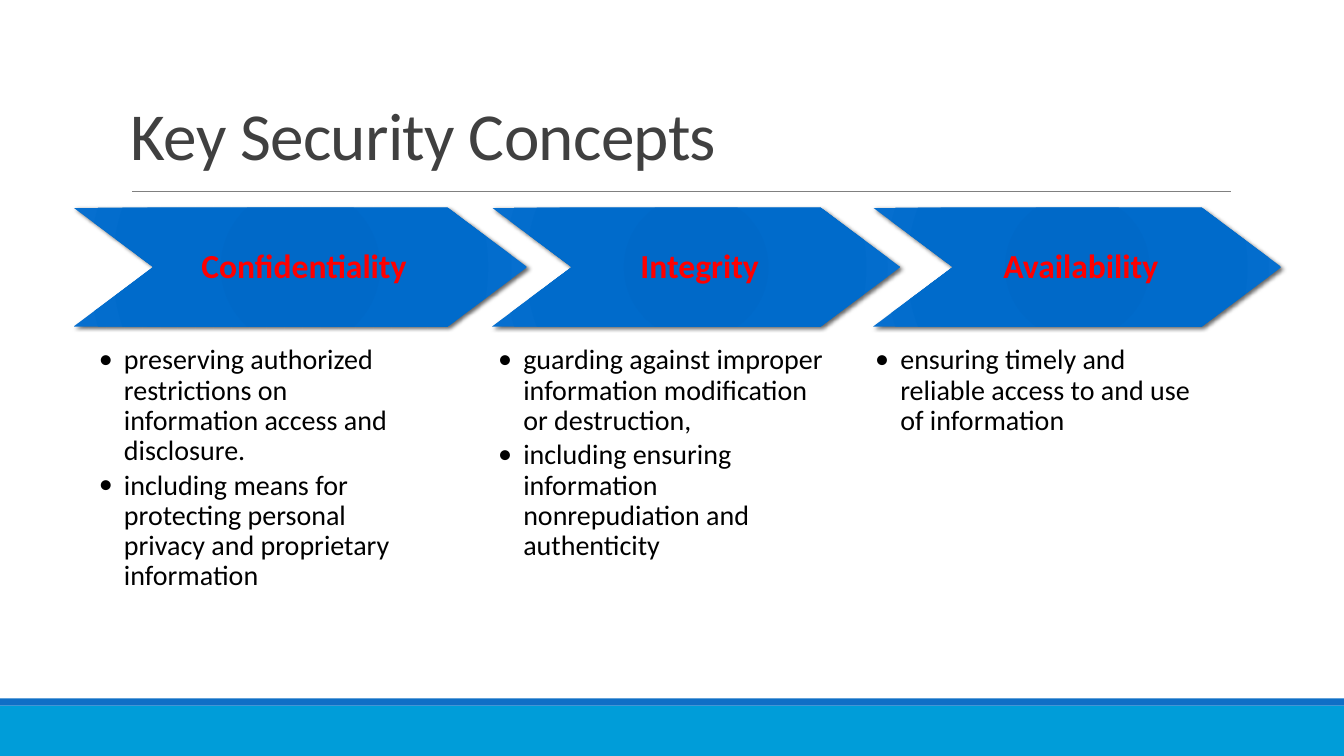
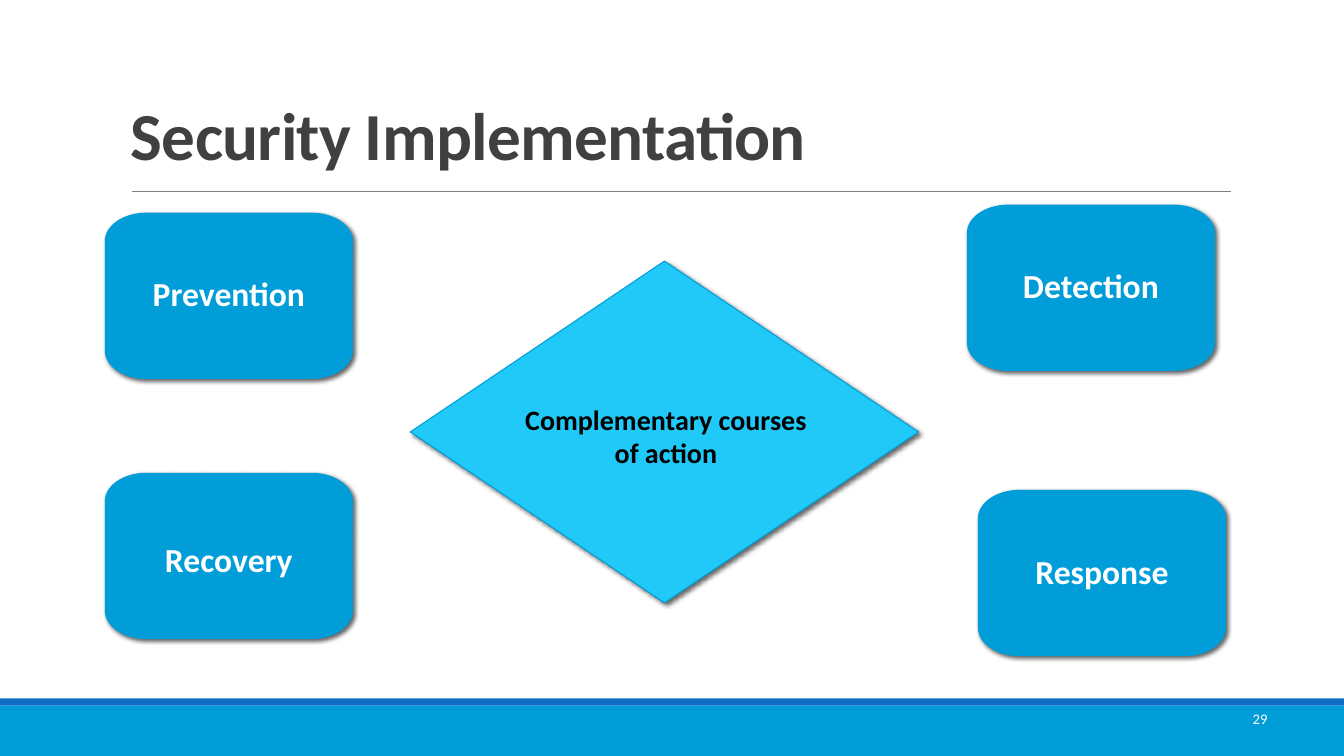
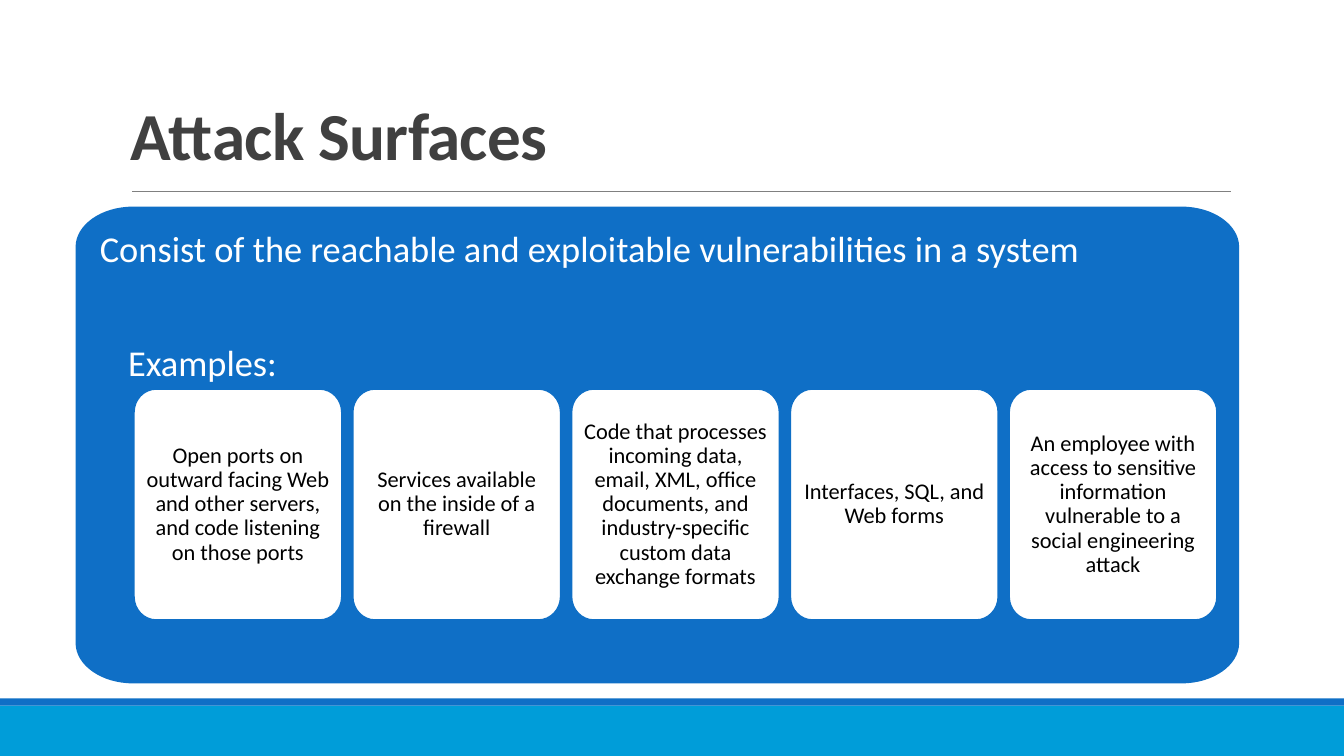
"""Three slides on key security concepts, implementation and attack surfaces."""
from lxml import etree
from pptx import Presentation
from pptx.dml.color import RGBColor
from pptx.enum.shapes import MSO_CONNECTOR, MSO_SHAPE
from pptx.enum.text import MSO_ANCHOR, PP_ALIGN
from pptx.oxml import parse_xml
from pptx.oxml.ns import nsdecls, qn
from pptx.util import Inches, Pt

RECT, CHEVRON, DIAMOND = MSO_SHAPE.RECTANGLE, MSO_SHAPE.CHEVRON, MSO_SHAPE.DIAMOND
STRAIGHT = MSO_CONNECTOR.STRAIGHT
TOP, MIDDLE, BOTTOM = MSO_ANCHOR.TOP, MSO_ANCHOR.MIDDLE, MSO_ANCHOR.BOTTOM
LEFT, CENTER, RIGHT = PP_ALIGN.LEFT, PP_ALIGN.CENTER, PP_ALIGN.RIGHT

FONT = "Calibri"
COLORS = {
    "white": "FFFFFF", "black": "000000", "title": "404040", "rule": "808080",
    "cyan": "009DD9", "blue": "0F6FC6", "sky": "20C9F8", "red": "FF0000",
}
CHEVRON_STOPS = [(0, "0068C6"), (34, "0069C8"), (70, "006BCB"), (100, "066FCF")]
DEFAULT_INSETS = (0.1, 0.05, 0.1, 0.05)
ARC = 0.55

CONCEPTS = [
    ("Confidentiality", (0.73, 4.5), 0.98, [
        "preserving authorized restrictions on information access and disclosure.",
        "including means for protecting personal privacy and proprietary information"]),
    ("Integrity", (4.88, 4.05), 4.94, [
        "guarding against improper information modification or destruction,",
        "including ensuring information nonrepudiation and authenticity"]),
    ("Availability", (8.66, 4.05), 8.68, [
        "ensuring timely and reliable access to and use of information"]),
]
ACTIONS = [
    ("Response", 9.7, 4.86, 0.21), ("Prevention", 1.04, 2.11, 0.2),
    ("Recovery", 1.04, 4.69, 0.32), ("Detection", 9.59, 2.03, 0.2),
]
EXAMPLES = [
    "Open ports on outward facing Web and other servers, and code listening on those ports",
    "Services available on the inside of a firewall",
    "Code that processes incoming data, email, XML, office documents, "
    "and industry-specific custom data exchange formats",
    "Interfaces, SQL, and Web forms",
    "An employee with access to sensitive information vulnerable to a social engineering attack",
]


def rgb(name):
    """Return the palette colour with this name."""
    return RGBColor.from_string(COLORS[name])


def inches(*values):
    """Convert several numbers to inch lengths."""
    return [Inches(v) for v in values]


def write(sp, lines, size, color, bold=False, align=LEFT, anchor=TOP,
          insets=DEFAULT_INSETS, spacing=None):
    """Fill a shape with paragraphs and return its text frame."""
    tf = sp.text_frame
    tf.word_wrap = True
    tf.vertical_anchor = anchor
    tf.margin_left, tf.margin_top, tf.margin_right, tf.margin_bottom = inches(*insets)
    for i, line in enumerate(lines):
        p = tf.paragraphs[0] if i == 0 else tf.add_paragraph()
        p.add_run().text = line
        p.alignment = align
        p.line_spacing = spacing
        p.font.name, p.font.size, p.font.bold = FONT, Pt(size), bold
        p.font.color.rgb = rgb(color)
    return tf


def text_box(s, box, *args, **kwargs):
    """Add a text box and return its text frame."""
    return write(s.shapes.add_textbox(*inches(*box)), *args, **kwargs)


def paint(sp, fill=None, line=None, width=1, shadow=False):
    """Set the fill, outline and shadow of a shape."""
    if fill:
        sp.fill.solid()
        sp.fill.fore_color.rgb = rgb(fill)
    else:
        sp.fill.background()
    if line:
        sp.line.color.rgb = rgb(line)
        sp.line.width = Pt(width)
    else:
        sp.line.fill.background()
    sp.shadow.inherit = False
    if shadow:
        effects = sp._element.spPr.find(qn("a:effectLst"))
        effects.append(parse_xml(
            f'<a:outerShdw {nsdecls("a")} blurRad="{Pt(3)}" dist="{Pt(2)}" dir="2700000" '
            f'algn="tl" rotWithShape="0"><a:srgbClr val="{COLORS["black"]}">'
            '<a:alpha val="60000"/></a:srgbClr></a:outerShdw>'))


def shape(s, kind, box, fill=None, **style):
    """Add a painted preset shape."""
    sp = s.shapes.add_shape(kind, *inches(*box))
    paint(sp, fill, **style)
    return sp


def round_corners(sp):
    """Turn every other edge of an eight-point outline into a quarter ellipse."""
    points = [(int(pt.get("x")), int(pt.get("y"))) for pt in sp._element.iter(qn("a:pt"))]
    edges = list(sp._element.iter(qn("a:lnTo")))
    for i in range(0, 8, 2):
        (x0, y0), (x1, y1) = points[i], points[i + 1]
        cx, cy = (x0, y1) if i % 4 == 0 else (x1, y0)
        controls = [(x + ARC * (cx - x), y + ARC * (cy - y)) for x, y in ((x0, y0), (x1, y1))]
        curve = etree.Element(qn("a:cubicBezTo"))
        for x, y in controls + [(x1, y1)]:
            etree.SubElement(curve, qn("a:pt"), x=str(round(x)), y=str(round(y)))
        edges[i].getparent().replace(edges[i], curve)


def panel(s, box, rx, ry, fill, **style):
    """Add a box with elliptical corners of radii rx and ry."""
    x, y, w, h = box
    right, bottom = x + w, y + h
    outline = [(x, y + ry), (x + rx, y), (right - rx, y), (right, y + ry),
               (right, bottom - ry), (right - rx, bottom), (x + rx, bottom), (x, bottom - ry)]
    points = [inches(*pt) for pt in outline]
    builder = s.shapes.build_freeform(*points[0])
    builder.add_line_segments(points[1:], close=True)
    sp = builder.convert_to_shape()
    round_corners(sp)
    paint(sp, fill, **style)
    return sp


def radial_fill(sp, stops):
    """Replace a solid fill by a circular gradient."""
    gs = "".join(f'<a:gs pos="{pos * 1000}"><a:srgbClr val="{c}"/></a:gs>' for pos, c in stops)
    spPr = sp._element.spPr
    spPr.replace(spPr.find(qn("a:solidFill")), parse_xml(
        f'<a:gradFill {nsdecls("a")} rotWithShape="1"><a:gsLst>{gs}</a:gsLst>'
        '<a:path path="circle"><a:fillToRect l="100000" t="100000" r="100000" b="100000"/>'
        '</a:path></a:gradFill>'))


def bullet(p):
    """Give a paragraph a hanging bullet."""
    pPr = p._p.get_or_add_pPr()
    pPr.set("marL", str(Inches(0.25)))
    pPr.set("indent", str(Inches(-0.25)))
    font = pPr.find(qn("a:defRPr"))
    font.addprevious(parse_xml(f'<a:buFont {nsdecls("a")} typeface="{FONT}"/>'))
    font.addprevious(parse_xml(f'<a:buChar {nsdecls("a")} char="•"/>'))


def new_slide(prs, title, bold=True, title_width=11):
    """Add a slide with the shared bands, rule and title."""
    s = prs.slides.add_slide(prs.slide_layouts[6])
    shape(s, RECT, (0, 7, 13.33, 0.5), "cyan")
    shape(s, RECT, (0, 6.93, 13.33, 0.07), "blue")
    rule = s.shapes.add_connector(STRAIGHT, *inches(1.31, 1.9, 12.21, 1.9))
    rule.line.color.rgb = rgb("rule")
    rule.line.width = Pt(0.5)
    etree.SubElement(rule._element.spPr, qn("a:effectLst"))
    tf = text_box(s, (1.2, 0.19, title_width, 1.59), [title], 48, "title", bold=bold,
                  anchor=BOTTOM, spacing=0.85)
    tf.paragraphs[0].runs[0]._r.get_or_add_rPr().set("spc", "-50")
    return s


def concept_header(s, box, name):
    """Draw one chevron heading."""
    sp = shape(s, CHEVRON, box, "blue", shadow=True)
    sp.adjustments[0] = 0.67
    radial_fill(sp, CHEVRON_STOPS)
    write(sp, [name], 24, "red", bold=True, align=CENTER, anchor=MIDDLE,
          insets=(0.07, 0.04, 0, 0.04), spacing=0.9)


def concept_points(s, box, lines):
    """Write the bulleted points under a chevron."""
    tf = write(shape(s, RECT, box), lines, 20, "black", insets=(0, 0, 0, 0), spacing=0.9)
    for p in tf.paragraphs:
        p.level = 1
        p.space_after = Pt(3)
        bullet(p)


def concepts_slide(prs):
    """Build the slide of three concepts."""
    s = new_slide(prs, "Key Security Concepts", bold=False)
    for name, (left, width), text_left, lines in CONCEPTS:
        concept_header(s, (left, 2.06, width, 1.18), name)
        concept_points(s, (text_left, 3.43, 3.24, 3.1), lines)


def implementation_slide(prs):
    """Build the slide of four actions around a diamond."""
    s = new_slide(prs, "Security Implementation")
    shape(s, DIAMOND, (4.07, 2.59, 5.04, 3.39), "sky", line="cyan", width=0.75, shadow=True)
    for name, left, top, inset_top in ACTIONS:
        sp = panel(s, (left, top, 2.46, 1.65), 0.41, 0.28, "cyan", shadow=True)
        write(sp, [name], 24, "white", bold=True, align=CENTER, anchor=MIDDLE,
              insets=(0.2, inset_top, 0.2, 0.2), spacing=0.9)
    text_box(s, (5.08, 3.94, 3.05, 0.77), ["Complementary courses of action"], 20, "black",
             bold=True, align=CENTER)
    text_box(s, (9.56, 6.93, 3.11, 0.4), ["29"], 10.5, "white", align=RIGHT, anchor=MIDDLE)


def example_cards(s, box, texts, width):
    """Spread equal cards over the box."""
    left, top, total, height = box
    pitch = (total - width) / (len(texts) - 1)
    for i, text in enumerate(texts):
        sp = panel(s, (left + i * pitch, top, width, height), 0.22, 0.23, "white", line="blue")
        write(sp, [text], 16, "black", align=CENTER, anchor=MIDDLE,
              insets=(0.11, 0.1, 0.11, 0.1), spacing=0.9)


def surfaces_slide(prs):
    """Build the slide of attack surfaces and examples."""
    s = new_slide(prs, "Attack Surfaces", title_width=9.4)
    outer = panel(s, (0.75, 2.05, 11.54, 4.73), 0.57, 0.4, "blue")
    write(outer, ["Consist of the reachable and exploitable vulnerabilities in a system"],
          26, "white", insets=(0.24, 0.24, 0.24, 0.24), spacing=0.9)
    inner = panel(s, (1.05, 3.2, 10.97, 3.31), 0.5, 0.35, "blue")
    write(inner, ["Examples:"], 26, "white", insets=(0.22, 0.22, 0.22, 0.22), spacing=0.9)
    example_cards(s, (1.33, 3.86, 10.74, 2.29), EXAMPLES, 2.06)


def main():
    """Build and save the presentation."""
    prs = Presentation()
    prs.slide_width, prs.slide_height = inches(13.33, 7.5)
    concepts_slide(prs)
    implementation_slide(prs)
    surfaces_slide(prs)
    prs.save("out.pptx")


if __name__ == "__main__":
    main()
